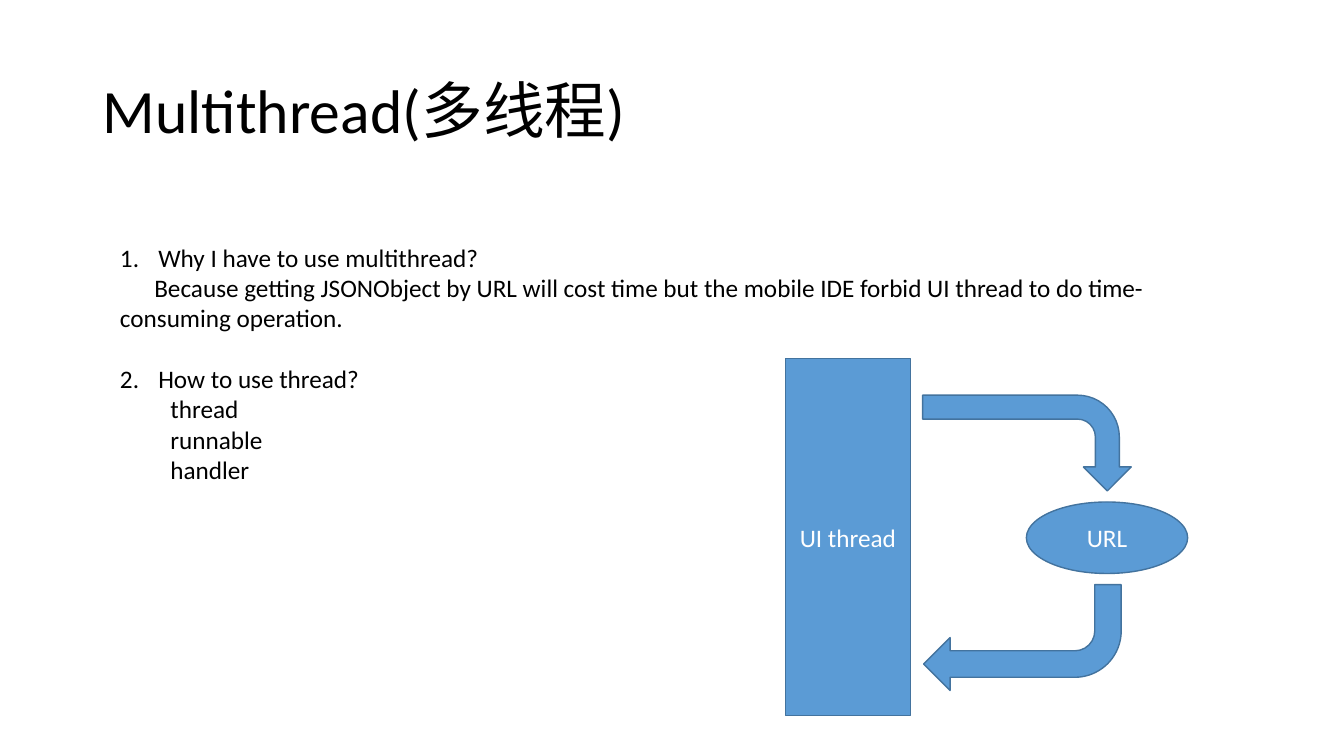
from dataclasses import dataclass

from lxml import etree
from pptx import Presentation
from pptx.dml.color import RGBColor
from pptx.enum.shapes import MSO_SHAPE
from pptx.enum.text import MSO_ANCHOR, MSO_AUTO_SIZE, PP_ALIGN
from pptx.oxml.ns import qn
from pptx.util import Emu, Pt

RECT, OVAL, BENT = MSO_SHAPE.RECTANGLE, MSO_SHAPE.OVAL, MSO_SHAPE.BENT_ARROW
LEFT, CENTER = PP_ALIGN.LEFT, PP_ALIGN.CENTER
TOP, MIDDLE = MSO_ANCHOR.TOP, MSO_ANCHOR.MIDDLE
GROW, FIXED = MSO_AUTO_SIZE.SHAPE_TO_FIT_TEXT, MSO_AUTO_SIZE.NONE

BLACK = RGBColor(0x00, 0x00, 0x00)
WHITE = RGBColor(0xFF, 0xFF, 0xFF)
BLUE = RGBColor(0x5B, 0x9B, 0xD5)
EDGE = RGBColor(0x43, 0x73, 0x9E)
FACE = "Calibri"
SCALE = 9144  # EMU per px, 100 px to the inch


@dataclass
class Line:
    text: str
    margin: int = 0
    indent: int = 0
    number: int = 0
    level: int = 0
    gap: int = 0  # points before


@dataclass
class Part:
    kind: MSO_SHAPE
    box: tuple[int, int, int, int]
    text: str = ""
    turn: int = 0


LINES = [
    Line("Why I have to use multithread?", 38, -38, number=1),
    Line("Because getting JSONObject by URL will cost time but the mobile IDE "
         "forbid UI thread to do time-consuming operation.", indent=34),
    Line("How to use thread?", 38, -38, number=2, gap=22),
    *(Line(name, 50, level=1) for name in ("thread", "runnable", "handler")),
]

PARTS = [
    Part(RECT, (779, 356, 124, 354), "UI thread"),
    Part(OVAL, (1018, 498, 160, 71), "URL"),
    Part(BENT, (971, 336, 95, 207), turn=90),
    Part(BENT, (916, 580, 196, 105), turn=180),
]


def px(size: int) -> Emu:
    return Emu(size * SCALE)


def place(shape, box: tuple[int, int, int, int]) -> None:
    shape.left, shape.top, shape.width, shape.height = map(px, box)


def style(para, size: int, color: RGBColor, align: PP_ALIGN) -> None:
    para.alignment = align
    para.font.name = FACE
    para.font.size = Pt(size)
    para.font.color.rgb = color


def write(para, line: Line) -> None:
    para.text = line.text
    para.level = line.level
    para.space_before = Pt(line.gap)
    props = para._p.get_or_add_pPr()
    props.set("marL", str(px(line.margin)))
    props.set("indent", str(px(line.indent)))
    if line.number:
        mark = etree.SubElement(props, qn("a:buAutoNum"), type="arabicPeriod")
        mark.set("startAt", str(line.number))
    else:
        etree.SubElement(props, qn("a:buNone"))
    style(para, 18, BLACK, LEFT)


def draw(slide, part: Part) -> None:
    shape = slide.shapes.add_shape(part.kind, *map(px, part.box))
    shape.rotation = part.turn
    shape.shadow.inherit = False
    shape.fill.solid()
    shape.fill.fore_color.rgb = BLUE
    shape.line.color.rgb = EDGE
    shape.line.width = Pt(1)
    if part.text:
        frame = shape.text_frame
        frame.text = part.text
        frame.vertical_anchor = MIDDLE
        style(frame.paragraphs[0], 18, WHITE, CENTER)


def main() -> None:
    deck = Presentation()
    deck.slide_width, deck.slide_height = px(1333), px(750)
    slide = deck.slides.add_slide(deck.slide_layouts[1])

    # Title
    title = slide.shapes.title
    place(title, (92, 40, 1150, 145))
    frame = title.text_frame
    frame.text = "Multithread(多线程)"
    frame.auto_size = FIXED
    frame.vertical_anchor = MIDDLE
    head = frame.paragraphs[0]
    head.line_spacing = 0.9
    style(head, 44, BLACK, LEFT)

    # Questions and answers
    body = slide.placeholders[1]
    place(body, (109, 235, 1120, 252))
    frame = body.text_frame
    frame.auto_size = GROW
    frame.vertical_anchor = TOP
    for i, line in enumerate(LINES):
        write(frame.add_paragraph() if i else frame.paragraphs[0], line)

    # Thread diagram
    for part in PARTS:
        draw(slide, part)

    deck.save("out.pptx")


if __name__ == "__main__":
    main()
